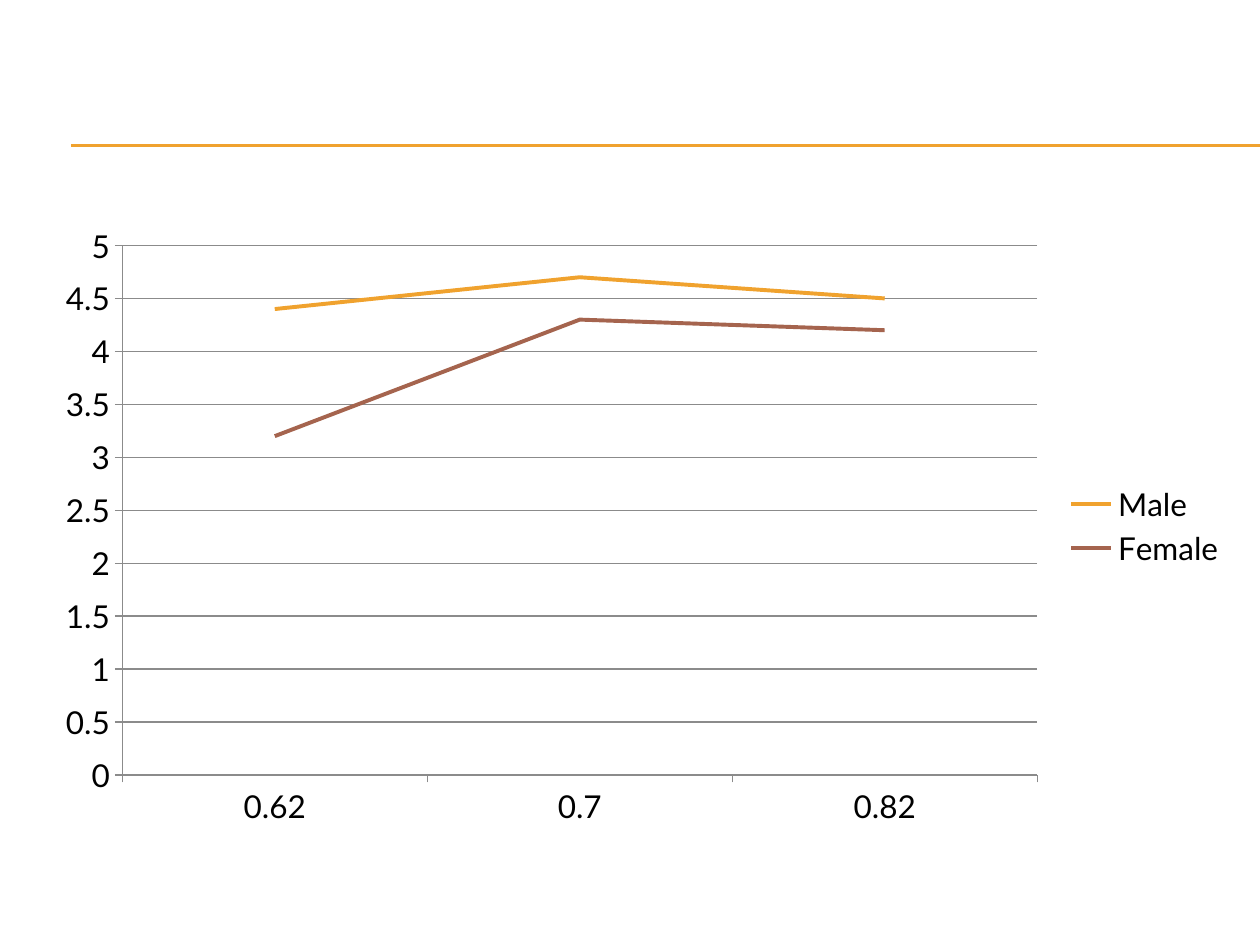
from dataclasses import dataclass

from lxml.etree import SubElement
from pptx import Presentation
from pptx.chart.data import CategoryChartData
from pptx.dml.color import RGBColor
from pptx.enum.chart import XL_CHART_TYPE, XL_LEGEND_POSITION, XL_TICK_MARK
from pptx.oxml.ns import qn
from pptx.util import Emu, Pt

PX_PER_INCH = 126


@dataclass(frozen=True)
class Theme:
    gold: RGBColor = RGBColor(0xF0, 0xA2, 0x2E)
    brown: RGBColor = RGBColor(0xA5, 0x64, 0x4E)
    text: RGBColor = RGBColor(0, 0, 0)
    axis: RGBColor = RGBColor(0x8B, 0x8B, 0x8B)
    font: str = "Lato"
    label_size: Pt = Pt(18)
    rule_width: Pt = Pt(0.75)
    series_width: Pt = Pt(2.25)


THEME = Theme()


@dataclass(frozen=True)
class Rule:
    left: int
    right: int
    y: int


@dataclass(frozen=True)
class Group:
    name: str
    scores: tuple[float, ...]
    color: RGBColor


RULES = [Rule(71, 1260, 145), Rule(71, 1260, 146)]
CATEGORIES = ["0.62", "0.7", "0.82"]
GROUPS = [
    Group("Male", (4.4, 4.7, 4.5), THEME.gold),
    Group("Female", (3.2, 4.3, 4.2), THEME.brown),
]


def px(length: int) -> Emu:
    return Emu(round(length * 914400 / PX_PER_INCH))


def style_line(line, color: RGBColor, width: Pt) -> None:
    line.color.rgb = color
    line.width = width


def draw_rule(slide, rule: Rule) -> None:
    connector = slide.shapes.add_connector(
        1, px(rule.left), px(rule.y), px(rule.right), px(rule.y))
    style_line(connector.line, THEME.gold, THEME.rule_width)
    SubElement(connector.element.spPr, qn("a:effectLst"))


def draw_scores(slide, groups: list[Group]) -> None:
    """Draw one line per group, with the legend on the right."""
    data = CategoryChartData()
    data.categories = CATEGORIES
    for group in groups:
        data.add_series(group.name, group.scores)
    chart = slide.shapes.add_chart(
        XL_CHART_TYPE.LINE, px(42), px(214), px(1197), px(624), data).chart

    chart.has_title = False
    chart.font.name = THEME.font
    chart.font.size = THEME.label_size
    chart.font.color.rgb = THEME.text
    chart.has_legend = True
    chart.legend.position = XL_LEGEND_POSITION.RIGHT
    chart.legend.include_in_layout = False

    scores = chart.value_axis
    scores.minimum_scale, scores.maximum_scale, scores.major_unit = 0, 5, 0.5
    scores.has_major_gridlines = True
    style_line(scores.major_gridlines.format.line, THEME.axis, THEME.rule_width)
    scores.tick_labels.number_format = "General"
    scores.tick_labels.number_format_is_linked = False
    for axis in (scores, chart.category_axis):
        axis.major_tick_mark = XL_TICK_MARK.OUTSIDE
        axis.minor_tick_mark = XL_TICK_MARK.NONE
        style_line(axis.format.line, THEME.axis, THEME.rule_width)

    chart.plots[0].vary_by_categories = False
    for series, group in zip(chart.plots[0].series, groups):
        series.smooth = False
        style_line(series.format.line, group.color, THEME.series_width)


def main() -> None:
    deck = Presentation()
    deck.slide_width, deck.slide_height = px(1260), px(945)
    slide = deck.slides.add_slide(deck.slide_layouts[6])
    for rule in RULES:
        draw_rule(slide, rule)
    draw_scores(slide, GROUPS)
    deck.save("out.pptx")


if __name__ == "__main__":
    main()
